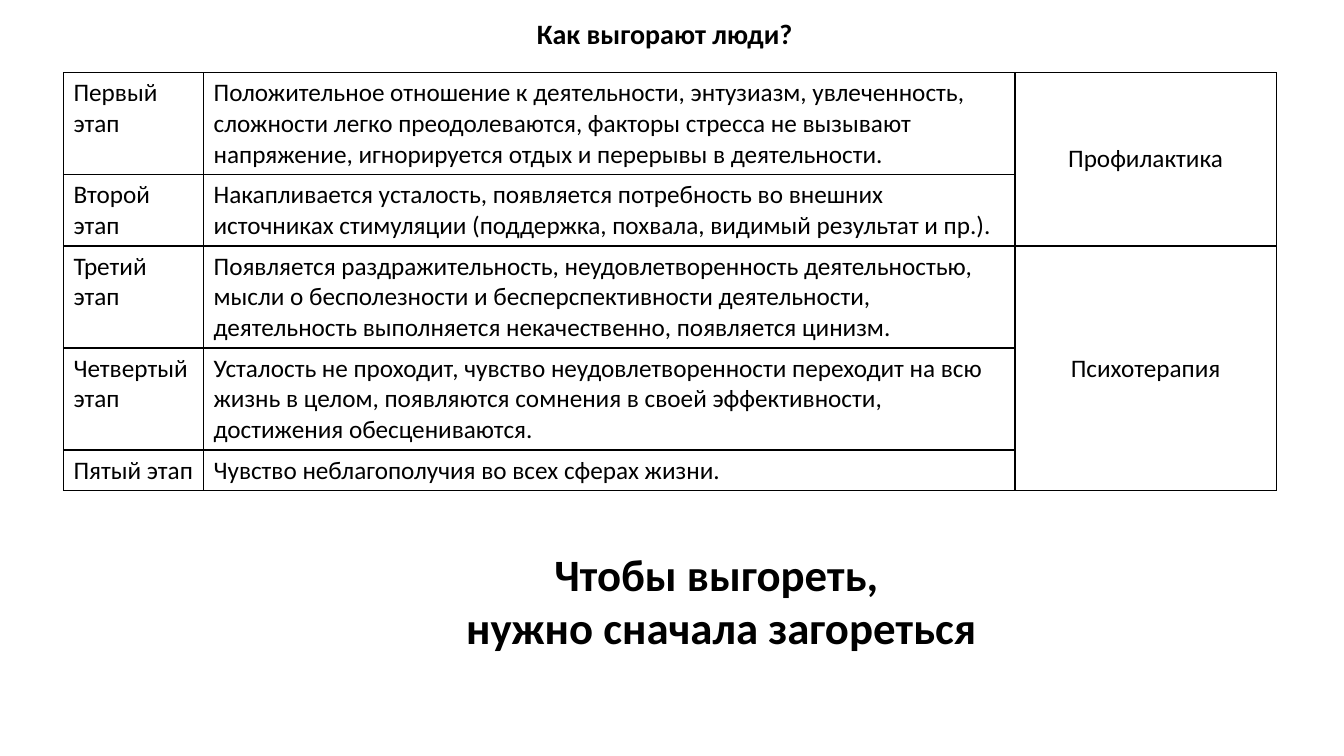
"""Builds a slide with the stages of burnout and a closing remark."""
import pptx
import pptx.dml.color
import pptx.enum.text
import pptx.oxml
import pptx.oxml.ns
import pptx.util
from pptx.util import Cm, Pt

BLACK = pptx.dml.color.RGBColor(0, 0, 0)
WHITE = pptx.dml.color.RGBColor(255, 255, 255)
FONT = "Calibri"
CENTER = pptx.enum.text.PP_ALIGN.CENTER
LEFT = pptx.enum.text.PP_ALIGN.LEFT
MIDDLE = pptx.enum.text.MSO_ANCHOR.MIDDLE

TITLE = ["Как выгорают люди?"]
CLOSING = ["Чтобы выгореть, ", "нужно сначала загореться"]
STAGES = [
    ("Первый этап", "Положительное отношение к деятельности, энтузиазм, увлеченность, "
     "сложности легко преодолеваются, факторы стресса не вызывают напряжение, "
     "игнорируется отдых и перерывы в деятельности.", 3),
    ("Второй этап", "Накапливается усталость, появляется потребность во внешних "
     "источниках стимуляции (поддержка, похвала, видимый результат и пр.).", 2),
    ("Третий этап", "Появляется раздражительность, неудовлетворенность деятельностью, "
     "мысли о бесполезности и бесперспективности деятельности, "
     "деятельность выполняется некачественно, появляется цинизм.", 3),
    ("Четвертый этап", "Усталость не проходит, чувство неудовлетворенности переходит "
     "на всю жизнь в целом, появляются сомнения в своей эффективности, "
     "достижения обесцениваются.", 3),
    ("Пятый этап", "Чувство неблагополучия во всех сферах жизни.", 1),
]
MEASURES = [("Профилактика", 0, 1), ("Психотерапия", 2, 4)]
COLUMN_WIDTHS = [3.53, 20.45, 6.58]
LINE_HEIGHT = 0.77
CELL_PADDING = 0.26


def style_paragraph(para, size, bold, alignment):
    para.alignment = alignment
    para.font.name = FONT
    para.font.size = Pt(size)
    para.font.bold = bold
    para.font.color.rgb = BLACK


def add_text(page, lines, left, top, width, height, size, alignment):
    box = page.shapes.add_textbox(Cm(left), Cm(top), Cm(width), Cm(height))
    frame = box.text_frame
    frame.word_wrap = False
    frame.auto_size = pptx.enum.text.MSO_AUTO_SIZE.SHAPE_TO_FIT_TEXT
    frame.text = "\n".join(lines)
    for para in frame.paragraphs:
        style_paragraph(para, size, True, alignment)


def style_cell(cell):
    properties = cell._tc.get_or_add_tcPr()
    for side in ("lnL", "lnR", "lnT", "lnB"):
        properties.append(pptx.oxml.parse_xml(
            f'<a:{side} {pptx.oxml.ns.nsdecls("a")} w="{Pt(1)}"><a:solidFill>'
            f'<a:srgbClr val="{BLACK}"/></a:solidFill></a:{side}>'))
    cell.fill.solid()
    cell.fill.fore_color.rgb = WHITE


def write_cell(cell, text, alignment=LEFT):
    cell.text = text
    style_paragraph(cell.text_frame.paragraphs[0], 18, False, alignment)


def add_stage_table(page):
    heights = [CELL_PADDING + LINE_HEIGHT * lines for *_, lines in STAGES]
    table = page.shapes.add_table(
        len(STAGES), len(COLUMN_WIDTHS), Cm(1.6), Cm(1.83),
        Cm(sum(COLUMN_WIDTHS)), Cm(sum(heights))).table
    table.first_row = False
    table.horz_banding = False
    for column, width in zip(table.columns, COLUMN_WIDTHS):
        column.width = Cm(width)
    for row, height in zip(table.rows, heights):
        row.height = Cm(height)
    for cell in table.iter_cells():
        style_cell(cell)
        write_cell(cell, "")
    for index, (stage, description, _) in enumerate(STAGES):
        write_cell(table.cell(index, 0), stage)
        write_cell(table.cell(index, 1), description)
    for measure, first, last in MEASURES:
        cell = table.cell(first, 2)
        cell.merge(table.cell(last, 2))
        cell.vertical_anchor = MIDDLE
        write_cell(cell, measure, CENTER)


def main():
    deck = pptx.Presentation()
    deck.slide_width = Cm(33.87)
    deck.slide_height = Cm(19.05)
    page = deck.slides.add_slide(deck.slide_layouts[6])
    add_text(page, TITLE, 13.28, 0.28, 7.01, 1.11, 20, LEFT)
    add_stage_table(page)
    add_text(page, CLOSING, 11.43, 13.64, 13.51, 2.99, 32, CENTER)
    deck.save("out.pptx")


if __name__ == "__main__":
    main()
